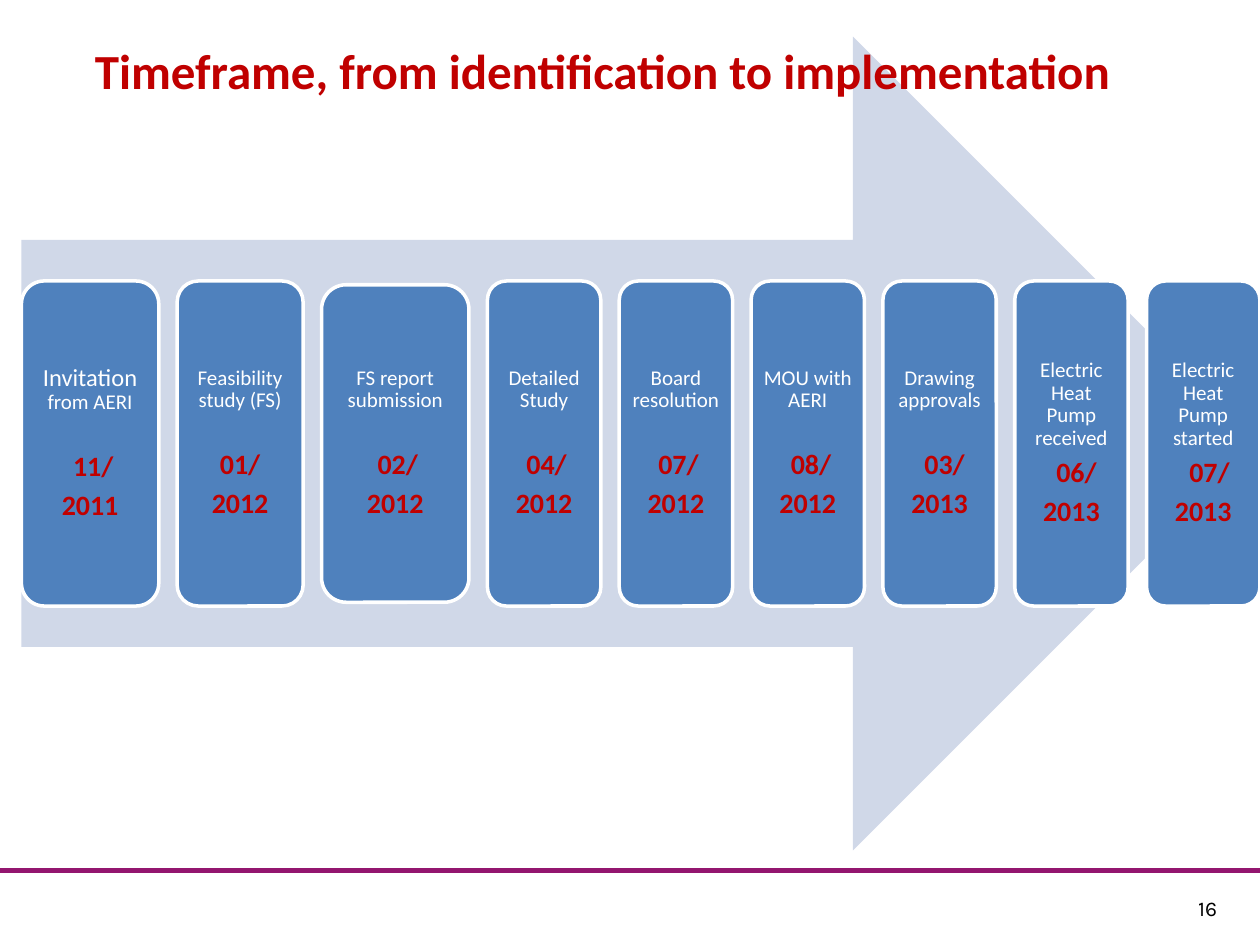
"""Build the project timeframe slide."""
from lxml import etree
from pptx import Presentation
from pptx.dml.color import RGBColor
from pptx.enum.shapes import MSO_CONNECTOR, MSO_SHAPE
from pptx.enum.text import MSO_ANCHOR, MSO_AUTO_SIZE, PP_ALIGN
from pptx.oxml.ns import qn
from pptx.util import Inches, Pt

ARROW, ROUND = MSO_SHAPE.RIGHT_ARROW, MSO_SHAPE.ROUNDED_RECTANGLE
STRAIGHT = MSO_CONNECTOR.STRAIGHT
TOP, MIDDLE = MSO_ANCHOR.TOP, MSO_ANCHOR.MIDDLE
CENTER, RIGHT = PP_ALIGN.CENTER, PP_ALIGN.RIGHT
NO_FIT = MSO_AUTO_SIZE.NONE

RED = RGBColor(0xC0, 0x00, 0x00)
BLUE = RGBColor(0x4F, 0x81, 0xBD)
PALE = RGBColor(0xD0, 0xD8, 0xE8)
PURPLE = RGBColor(0x93, 0x16, 0x6F)
WHITE = RGBColor(0xFF, 0xFF, 0xFF)
BLACK = RGBColor(0x00, 0x00, 0x00)

TITLE = "Timeframe, from identification to implementation"
PAGE = "16"
# name runs, month, year, width, height, month indent, space after name
NAME, BIG = {"size": Pt(12), "name": "Calibri", "bold": False}, {"size": Pt(14), "name": "Calibri", "bold": False}
DATE = {"size": Pt(16), "name": "Calibri", "bold": True}
HEAD = {"size": Pt(28), "name": "Calibri", "bold": True}
NUMBER = {"size": Pt(12), "name": "Karla", "bold": False}
STAGES = [
    ([("Invitation", BIG), (" from AERI", NAME)], "11/", "2011", 1.09, 2.58, 0.05, 22),
    ([("Feasibility study (FS)", NAME)], "01/", "2012", 1.0, 2.58, 0, 22),
    ([("FS report submission", NAME)], "02/", "2012", 1.17, 2.52, 0.04, 22),
    ([("Detailed Study", NAME)], "04/", "2012", 0.9, 2.58, 0.04, 22),
    ([("Board resolution", NAME)], "07/", "2012", 0.9, 2.58, 0.04, 22),
    ([("MOU with AERI", NAME)], "08/", "2012", 0.9, 2.58, 0.05, 22),
    ([("Drawing approvals", NAME)], "03/", "2013", 0.9, 2.58, 0.08, 22),
    ([("Electric Heat Pump received", NAME)], "06/", "2013", 0.9, 2.58, 0.08, 5),
    ([("Electric Heat Pump started", NAME)], "07/", "2013", 0.9, 2.58, 0.1, 5),
]
LEFT, SPAN, MID = 0.17, 9.83, 3.52
ARROW_H = 6.46


def write(p, runs, color, **layout):
    for key, value in layout.items():
        setattr(p, key, value)
    for text, fmt in runs:
        r = p.add_run()
        r.text = text
        for key, value in fmt.items():
            setattr(r.font, key, value)
        r.font.color.rgb = color


def add_block(slide, kind, x, w, h, fill):
    sp = slide.shapes.add_shape(kind, Inches(x), Inches(MID - h / 2), Inches(w), Inches(h))
    sp.shadow.inherit = False
    sp.fill.solid()
    sp.fill.fore_color.rgb = fill
    sp.line.fill.background()
    return sp


def add_stage(slide, x, stage):
    name, month, year, w, h, indent, gap = stage
    sp = add_block(slide, ROUND, x, w, h, BLUE)
    sp.line.color.rgb = WHITE
    sp.line.width = Pt(2)
    tf = sp.text_frame
    tf.word_wrap, tf.vertical_anchor = True, MIDDLE
    tf.margin_left = tf.margin_right = tf.margin_top = tf.margin_bottom = Inches(0.05)
    base = {"alignment": CENTER, "line_spacing": 0.9}
    write(tf.paragraphs[0], name, WHITE, space_after=Pt(gap), **base)
    p = tf.add_paragraph()
    p._p.get_or_add_pPr().set("marL", str(Inches(indent)))
    write(p, [(month, DATE)], RED, space_after=Pt(5), **base)
    write(tf.add_paragraph(), [(year, DATE)], RED, space_after=Pt(5), **base)


def main():
    prs = Presentation()
    prs.slide_width, prs.slide_height = Inches(10), Inches(7.5)
    slide = prs.slides.add_slide(prs.slide_layouts[5])

    rule = slide.shapes.add_connector(STRAIGHT, 0, Inches(6.91), prs.slide_width, Inches(6.91))
    rule.line.color.rgb = PURPLE
    rule.line.width = Pt(3)
    etree.SubElement(rule._element.spPr, qn("a:effectLst"))

    box = slide.shapes.add_textbox(Inches(9.41), Inches(7.06), Inches(0.47), Inches(0.3))
    box.text_frame.word_wrap = True
    write(box.text_frame.paragraphs[0], [(PAGE, NUMBER)], BLACK, alignment=CENTER)
    box.text_frame.paragraphs[0].alignment = RIGHT
    box.text_frame.margin_right = Inches(0.22)
    box.text_frame.margin_left = 0

    add_block(slide, ARROW, LEFT, SPAN, ARROW_H, PALE)
    gap = (SPAN - sum(stage[3] for stage in STAGES)) / (len(STAGES) - 1)
    x = LEFT
    for stage in STAGES:
        add_stage(slide, x, stage)
        x += stage[3] + gap

    title = slide.shapes.title
    title.left, title.top, title.width, title.height = map(Inches, (0.31, 0.27, 8.94, 0.57))
    tf = title.text_frame
    tf.word_wrap, tf.auto_size, tf.vertical_anchor = True, NO_FIT, TOP
    write(tf.paragraphs[0], [(TITLE, HEAD)], RED, alignment=CENTER)
    tree = slide.shapes._spTree
    tree.remove(title._element)
    tree.append(title._element)

    prs.save("out.pptx")


if __name__ == "__main__":
    main()
